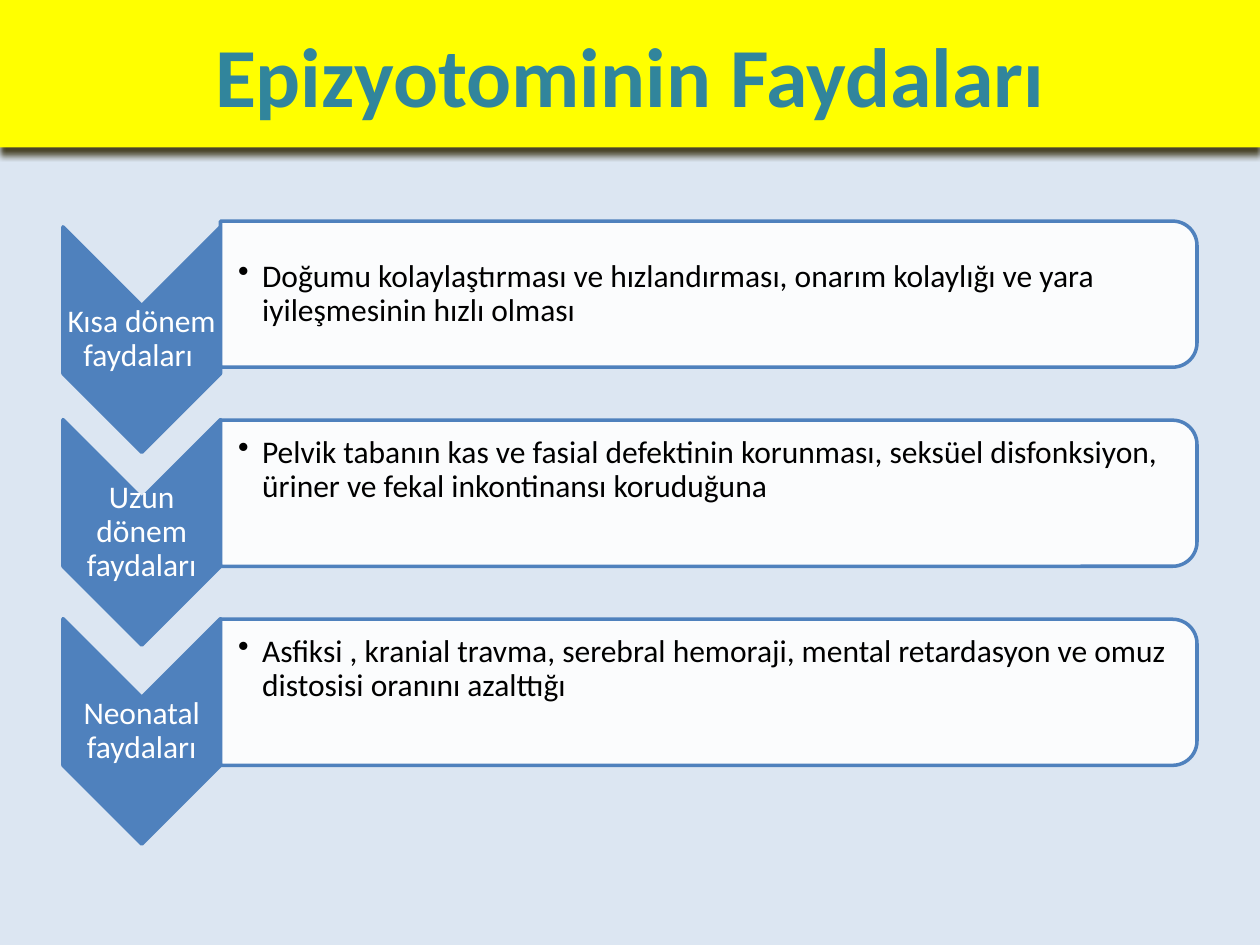
from lxml import etree
from pptx import Presentation
from pptx.dml.color import RGBColor
from pptx.enum.shapes import MSO_SHAPE
from pptx.enum.text import MSO_ANCHOR, PP_ALIGN
from pptx.oxml.ns import qn
from pptx.util import Inches, Pt

CHEVRON = MSO_SHAPE.CHEVRON
PANEL = MSO_SHAPE.ROUND_2_SAME_RECTANGLE
MIDDLE = MSO_ANCHOR.MIDDLE
LEFT, CENTER = PP_ALIGN.LEFT, PP_ALIGN.CENTER

YELLOW = RGBColor(0xFF, 0xFF, 0x00)
TEAL = RGBColor(0x31, 0x85, 0x9C)
BLUE = RGBColor(0x4F, 0x81, 0xBD)
PALE_BLUE = RGBColor(0xDC, 0xE6, 0xF2)
SHADOW = RGBColor(0x4A, 0x45, 0x2A)
WHITE = RGBColor(0xFF, 0xFF, 0xFF)
BLACK = RGBColor(0x00, 0x00, 0x00)

COLUMNS, ROWS = 40, 30
FIRST_ROW, ROW_PITCH = 9.34, 6.32
LABEL_COLUMN, LABEL_WIDTH = 2, 5
PANEL_COLUMN, PANEL_WIDTH = 7, 31
TITLE = "Epizyotominin Faydaları"

# Label, its chevron's drop below the panel's centre, benefit, bottom inset in inches
BENEFITS = [
    ("Kısa dönem faydaları ", 1.44,
     "Doğumu kolaylaştırması ve hızlandırması, onarım kolaylığı ve yara "
     "iyileşmesinin hızlı olması", 0.01),
    ("Uzun dönem faydaları", 1.24,
     "Pelvik tabanın kas ve fasial defektinin korunması, seksüel disfonksiyon, "
     "üriner ve fekal inkontinansı koruduğuna", 0.38),
    ("Neonatal faydaları", 1.24,
     "Asfiksi , kranial travma, serebral hemoraji, mental retardasyon ve omuz "
     "distosisi oranını azalttığı", 0.38),
]


def set_attributes(target, values):
    for name, value in values.items():
        setattr(target, name, value)


class SlideBuilder:
    font_name = "Calibri"
    body_size = Pt(18)

    def __init__(self, presentation):
        self.column = presentation.slide_width / COLUMNS
        self.row = presentation.slide_height / ROWS
        self.slide = presentation.slides.add_slide(presentation.slide_layouts[5])
        background = self.slide.background.fill
        background.solid()
        background.fore_color.rgb = PALE_BLUE
        self.group = None

    def box(self, left, center_row, width, height):
        top = center_row - height / 2
        return (round(left * self.column), round(top * self.row),
                round(width * self.column), round(height * self.row))

    def fill_text(self, shape, text, color, size, alignment, bold=False, insets=None):
        frame = shape.text_frame
        set_attributes(frame, {"word_wrap": True, "vertical_anchor": MIDDLE})
        set_attributes(frame, insets or {})
        paragraph = frame.paragraphs[0]
        paragraph.alignment = alignment
        run = paragraph.add_run()
        run.text = text
        set_attributes(run.font, {"name": self.font_name, "size": size, "bold": bold})
        run.font.color.rgb = color
        return paragraph

    def title(self, text, height):
        shape = self.slide.shapes.title
        left, top, width, height = self.box(0, height / 2, COLUMNS, height)
        set_attributes(shape, {"left": left, "top": top, "width": width, "height": height})
        shape.fill.solid()
        shape.fill.fore_color.rgb = YELLOW
        self.fill_text(shape, text, TEAL, Pt(48), CENTER, bold=True)
        effects = etree.SubElement(shape._element.spPr, qn("a:effectLst"))
        shadow = etree.SubElement(effects, qn("a:outerShdw"), blurRad=str(Pt(4)),
                                  dist=str(Pt(4)), dir="5400000", rotWithShape="0")
        etree.SubElement(shadow, qn("a:srgbClr"), val=str(SHADOW))

    def start_group(self):
        self.group = self.slide.shapes.add_group_shape()

    def turned_shape(self, kind, box, fill, opacity=100):
        """Add a preset turned by 90 degrees so that it fills the given box."""
        left, top, width, height = box
        shift = (width - height) // 2
        shape = self.group.shapes.add_shape(kind, left + shift, top - shift, height, width)
        shape.rotation = 90
        shape.shadow.inherit = False
        shape.fill.solid()
        shape.fill.fore_color.rgb = fill
        shape.line.color.rgb = BLUE
        shape.line.width = Pt(2)
        etree.SubElement(shape.line._ln, qn("a:round"))
        if opacity < 100:
            color = shape._element.spPr.find(qn("a:solidFill"))[0]
            etree.SubElement(color, qn("a:alpha"), val=str(opacity * 1000))

    def text(self, text, box, color, alignment, left_inset=0.01, bottom_inset=0.01):
        shape = self.group.shapes.add_textbox(*box)
        insets = {"margin_left": Inches(left_inset), "margin_top": Inches(0.01),
                  "margin_right": Inches(0.01), "margin_bottom": Inches(bottom_inset)}
        paragraph = self.fill_text(shape, text, color, self.body_size, alignment,
                                   insets=insets)
        paragraph.line_spacing = 0.9
        return paragraph

    def chevron(self, label, center_row):
        self.turned_shape(CHEVRON, self.box(LABEL_COLUMN, center_row, LABEL_WIDTH, 7.16), BLUE)
        self.text(label, self.box(LABEL_COLUMN, center_row, LABEL_WIDTH, 2.16), WHITE, CENTER)

    def panel(self, benefit, center_row, bottom_inset):
        self.turned_shape(PANEL, self.box(PANEL_COLUMN, center_row, PANEL_WIDTH, 4.64),
                          WHITE, opacity=90)
        paragraph = self.text(benefit, self.box(PANEL_COLUMN, center_row, 30.76, 4.2),
                              BLACK, LEFT, 0.14, bottom_inset)
        properties = paragraph._p.get_or_add_pPr()
        properties.set("marL", str(Inches(0.19)))
        properties.set("indent", str(Inches(-0.19)))
        etree.SubElement(properties, qn("a:buChar"), char="•")


def main():
    presentation = Presentation()
    presentation.slide_width, presentation.slide_height = Inches(10), Inches(7.5)
    builder = SlideBuilder(presentation)
    builder.title(TITLE, 4.68)
    builder.start_group()
    for index, (label, drop, benefit, bottom_inset) in enumerate(BENEFITS):
        center_row = FIRST_ROW + index * ROW_PITCH
        builder.chevron(label, center_row + drop)
        builder.panel(benefit, center_row, bottom_inset)
    presentation.save("out.pptx")


if __name__ == "__main__":
    main()
